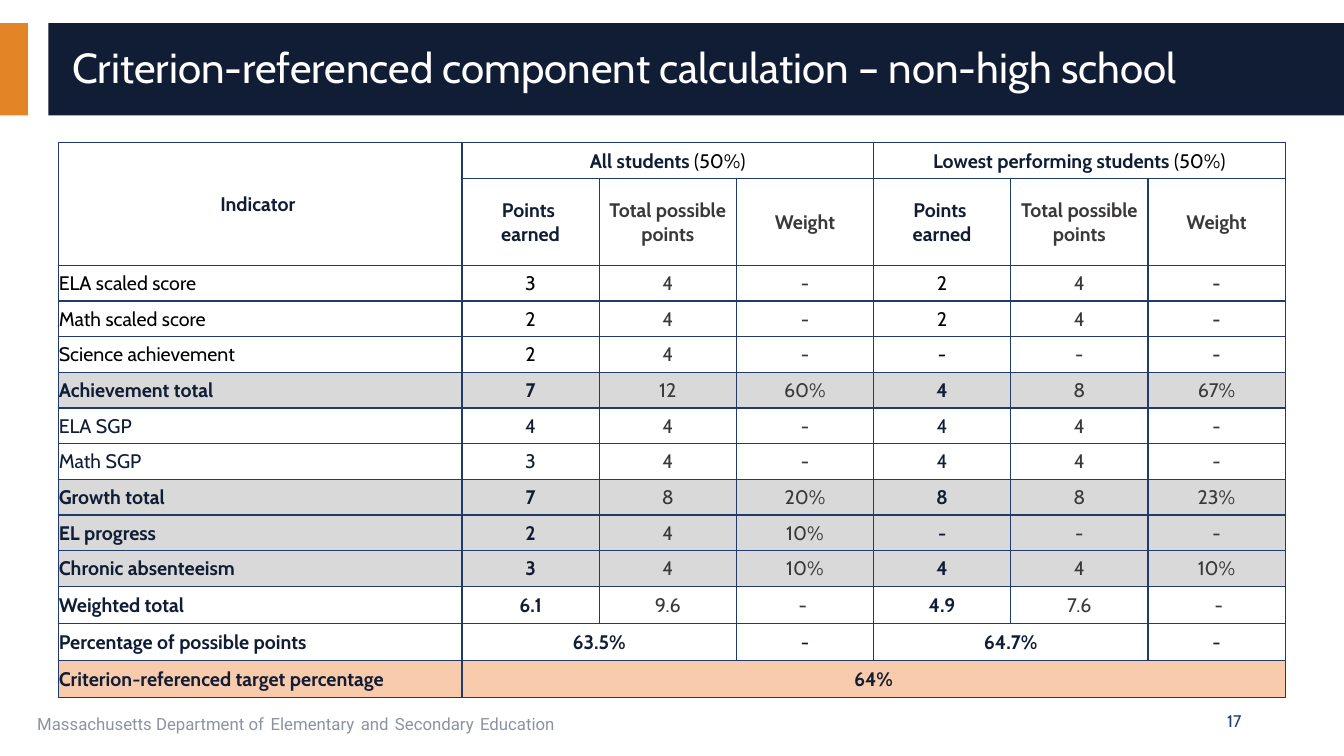
from lxml import etree
from pptx import Presentation
from pptx import util as u
from pptx.dml import color
from pptx.enum import shapes, text
from pptx.oxml import ns

PX = 6350  # 144 px to the inch
NAVY, BLUE, ORANGE, GREY = "101D35", "203B6A", "E38526", "D9D9D9"
PEACH, CHARCOAL, BLACK, WHITE, MUTED = "F8CBAD", "3B3838", "000000", "FFFFFF", "8D92A1"

SUBHEADS = ["Points \nearned", "Total possible points", "Weight"]
ROWS = [
    ["Indicator ", "All students (50%)", "", "", "Lowest performing students (50%)", "", ""],
    [""] + SUBHEADS * 2,
    ["ELA scaled score", "3", "4", "-", "2", "4", "-"],
    ["Math scaled score", "2", "4", "-", "2", "4", "-"],
    ["Science achievement", "2", "4", "-", "-", "-", "-"],
    ["Achievement total", "7", "12", "60%", "4", "8", "67%"],
    ["ELA SGP", "4", "4", "-", "4", "4", "-"],
    ["Math SGP", "3", "4", "-", "4", "4", "-"],
    ["Growth total", "7", "8", "20%", "8", "8", "23%"],
    ["EL progress", "2", "4", "10%", "-", "-", "-"],
    ["Chronic absenteeism", "3", "4", "10%", "4", "4", "10%"],
    ["Weighted total", "6.1", "9.6", "- ", "4.9", "7.6", " -"],
    ["Percentage of possible points", "63.5%", "", "-", "64.7%", "", "-"],
    ["Criterion-referenced target percentage", "64%", "", "", "", "", ""],
]
HEADER_ROWS = (0, 1)
SCORE_ROWS = (2, 3, 4)
PLAIN_ROWS = SCORE_ROWS + (6, 7)
SHADED_ROWS = (5, 8, 9, 10)
PERCENT_ROW, TARGET_ROW = 12, 13
POINTS_COLUMNS = (1, 4)
# first row, first column, last row, last column
MERGES = [(0, 0, 1, 0), (0, 1, 0, 3), (0, 4, 0, 6), (12, 1, 12, 2), (12, 4, 12, 5), (13, 1, 13, 6)]


def px(*lengths):
    return [length * PX for length in lengths]


def rgb(value):
    return color.RGBColor.from_string(value)


def style(span, size, tint, bold=False, face="Cabin"):
    span.font.size = u.Pt(size)
    span.font.name = face
    span.font.bold = bold
    span.font.color.rgb = rgb(tint)


def add_bar(page, box, tint):
    bar = page.shapes.add_shape(shapes.MSO_SHAPE.RECTANGLE, *px(*box))
    bar.shadow.inherit = False
    bar.fill.solid()
    bar.fill.fore_color.rgb = rgb(tint)
    bar.line.fill.background()


def add_title_band(page, box):
    left, top, width, height = box
    add_bar(page, (left, top, 40, height), ORANGE)
    add_bar(page, (left + 69, top, width - 69, height), NAVY)
    title = page.shapes.title
    title.element.getparent().append(title.element)  # bring in front of the band
    title.left, title.top, title.width, title.height = px(left + 89, top + 13, width - 129, height - 25)
    frame = title.text_frame
    frame.text = "Criterion-referenced component calculation – non-high school"
    frame.vertical_anchor = text.MSO_ANCHOR.MIDDLE
    para = frame.paragraphs[0]
    para.alignment = text.PP_ALIGN.LEFT
    para.line_spacing = 0.9
    style(para.runs[0], 30, WHITE)


def add_footer(page, box):
    left, top, width, height = box
    credit = page.shapes.add_textbox(*px(left, top, 1215, height)).text_frame
    credit.word_wrap = True
    parts = ["Massachusetts Department of", " ", "Elementary", " ", "and", " ", "Secondary", " ", "Education"]
    for part in parts:
        span = credit.paragraphs[0].add_run()
        span.text = part
        style(span, 18 if part == " " else 12, MUTED, face="Roboto")
    number = page.shapes.add_textbox(*px(left + width - 432, top, 432, height)).text_frame
    number.word_wrap = True
    number.text = "17"
    number.vertical_anchor = text.MSO_ANCHOR.MIDDLE
    number.paragraphs[0].alignment = text.PP_ALIGN.RIGHT
    style(number.paragraphs[0].runs[0], 12, BLUE)


def border_cell(cell):
    properties = cell._tc.get_or_add_tcPr()
    for side in ("a:lnL", "a:lnR", "a:lnT", "a:lnB"):
        line = etree.SubElement(properties, ns.qn(side), w=str(u.Pt(1)))
        fill = etree.SubElement(line, ns.qn("a:solidFill"))
        etree.SubElement(fill, ns.qn("a:srgbClr"), val=BLUE)


def fill_cell(cell, row):
    tint = GREY if row in SHADED_ROWS else PEACH if row == TARGET_ROW else None
    if tint:
        cell.fill.solid()
        cell.fill.fore_color.rgb = rgb(tint)
    else:
        cell.fill.background()


def cell_font(row, column):
    """Return the text colour and weight for a place in the table."""
    lead = column == 0 or column in POINTS_COLUMNS
    if lead:
        return (BLACK if row in SCORE_ROWS else NAVY), row not in PLAIN_ROWS
    tint = NAVY if row == PERCENT_ROW else CHARCOAL
    return tint, row in HEADER_ROWS or (row in SCORE_ROWS and column == 6)


def write_cell(cell, row, column, words):
    cell.vertical_anchor = text.MSO_ANCHOR.MIDDLE
    cell.margin_left, cell.margin_top, cell.margin_right, cell.margin_bottom = px(1, 1, 1, 0)
    share = "(50%)"
    cell.text_frame.text = words.removesuffix(share)
    left_aligned = column == 0 and row not in HEADER_ROWS
    tint, bold = cell_font(row, column)
    for para in cell.text_frame.paragraphs:
        para.alignment = text.PP_ALIGN.LEFT if left_aligned else text.PP_ALIGN.CENTER
        for span in para.runs:
            style(span, 14, tint, bold)
    if words.endswith(share):
        span = cell.text_frame.paragraphs[0].add_run()
        span.text = share
        style(span, 14, BLACK)


def add_points_table(page, box):
    widths = [577] + [196] * 6
    heights = [51, 124] + [51] * 9 + [53] * 3
    table = page.shapes.add_table(len(heights), len(widths), *px(*box)).table
    table.first_row = table.horz_banding = False
    for column, width in zip(table.columns, px(*widths)):
        column.width = width
    for row, height in zip(table.rows, px(*heights)):
        row.height = height
    for top, left, bottom, right in MERGES:
        table.cell(top, left).merge(table.cell(bottom, right))
    for row, entries in enumerate(ROWS):
        for column, words in enumerate(entries):
            cell = table.cell(row, column)
            border_cell(cell)
            fill_cell(cell, row)
            if not cell.is_spanned:
                write_cell(cell, row, column, words)


def main():
    deck = Presentation()
    deck.slide_width, deck.slide_height = px(1920, 1080)
    page = deck.slides.add_slide(deck.slide_layouts[5])
    add_title_band(page, (0, 33, 1920, 132))
    add_points_table(page, (83, 204, 1753, 793))
    add_footer(page, (39, 1001, 1749, 58))
    deck.save("out.pptx")


if __name__ == "__main__":
    main()
